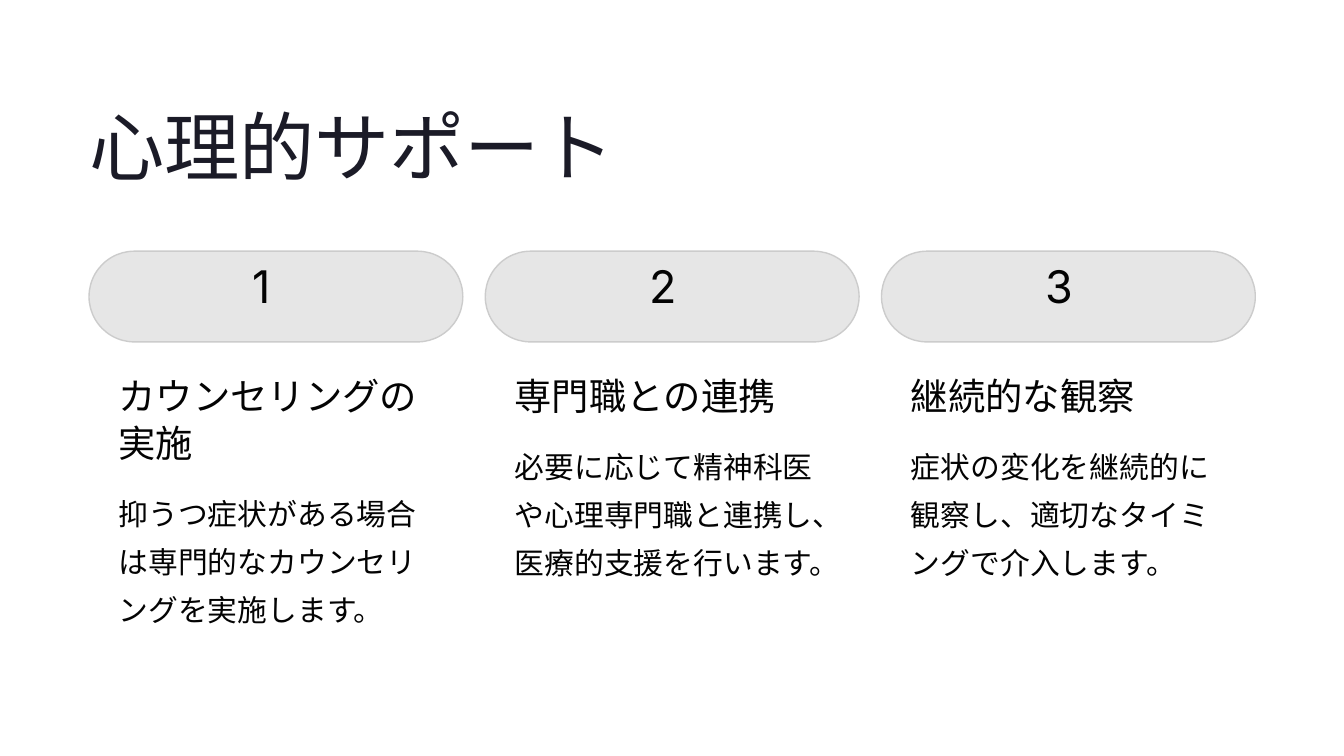
from dataclasses import dataclass

import pptx
import pptx.dml.color
import pptx.enum.shapes
import pptx.enum.text
import pptx.util
from pptx.util import Inches

RGBColor = pptx.dml.color.RGBColor
TITLE_INK = RGBColor(0x1B, 0x1B, 0x27)
INK = RGBColor(0x03, 0x03, 0x03)
PILL_FILL = RGBColor(0xE6, 0xE6, 0xE6)
PILL_LINE = RGBColor(0xCC, 0xCC, 0xCC)

LEFT, PITCH = 1.06, 4.717
PILL_TOP, PILL_WIDTH, PILL_HEIGHT = 2.99, 4.45, 1.08
TEXT_INDENT, TEXT_WIDTH = 0.35, 3.73
HEADING_TOP, HEADING_LINE, HEADING_GAP = 4.42, 0.56, 0.22
BODY_LINE = 0.57


@dataclass
class Style:
    size: float
    spacing: float
    font: str = "Inter"
    color: RGBColor = INK


@dataclass
class Step:
    heading: str
    body: str
    heading_lines: int = 1
    body_lines: int = 3


TITLE = Style(64.5, 80.5, color=TITLE_INK)
NUMBER = Style(38.5, 38.5)
HEADING = Style(32, 40)
BODY = Style(25.5, 41, "Lato")

STEPS = [
    Step("カウンセリングの実施",
         "抑うつ症状がある場合は専門的なカウンセリングを実施します。", heading_lines=2),
    Step("専門職との連携",
         "必要に応じて精神科医や心理専門職と連携し、医療的支援を行います。", body_lines=4),
    Step("継続的な観察",
         "症状の変化を継続的に観察し、適切なタイミングで介入します。"),
]


def set_all(target: object, values: dict) -> None:
    for name, value in values.items():
        setattr(target, name, value)


def write(sp, text: str, style: Style, wrap: bool = False) -> None:
    """Fill a text shape with one left-aligned paragraph and no margins."""
    tf = sp.text_frame
    set_all(tf, {
        "margin_left": 0, "margin_top": 0, "margin_right": 0, "margin_bottom": 0,
        "word_wrap": wrap,
        "auto_size": pptx.enum.text.MSO_AUTO_SIZE.NONE,
        "vertical_anchor": pptx.enum.text.MSO_ANCHOR.TOP,
    })
    p = tf.paragraphs[0]
    set_all(p, {"alignment": pptx.enum.text.PP_ALIGN.LEFT,
                "line_spacing": pptx.util.Pt(style.spacing)})
    r = p.add_run()
    r.text = text
    set_all(r.font, {"size": pptx.util.Pt(style.size), "name": style.font})
    r.font.color.rgb = style.color


def add_text(s, left: float, top: float, width: float, height: float,
             text: str, style: Style, wrap: bool = False) -> None:
    sp = s.shapes.add_textbox(Inches(left), Inches(top), Inches(width), Inches(height))
    write(sp, text, style, wrap)


def add_pill(s, left: float) -> None:
    sp = s.shapes.add_shape(
        pptx.enum.shapes.MSO_SHAPE.ROUNDED_RECTANGLE,
        Inches(left), Inches(PILL_TOP), Inches(PILL_WIDTH), Inches(PILL_HEIGHT))
    sp.adjustments[0] = 0.5
    sp.shadow.inherit = False
    sp.fill.solid()
    sp.fill.fore_color.rgb = PILL_FILL
    sp.line.color.rgb = PILL_LINE
    sp.line.width = pptx.util.Pt(1.2)


def add_step(s, index: int, step: Step) -> None:
    left = LEFT + index * PITCH
    text_left = left + TEXT_INDENT
    heading_height = step.heading_lines * HEADING_LINE
    body_top = HEADING_TOP + heading_height + HEADING_GAP
    add_pill(s, left)
    add_text(s, left + 1.95, PILL_TOP + 0.2, 0.54, 0.67, str(index + 1), NUMBER)
    add_text(s, text_left, HEADING_TOP, TEXT_WIDTH, heading_height,
             step.heading, HEADING, wrap=step.heading_lines > 1)
    add_text(s, text_left, body_top, TEXT_WIDTH, step.body_lines * BODY_LINE,
             step.body, BODY, wrap=True)


def main() -> None:
    prs = pptx.Presentation()
    set_all(prs, {"slide_width": Inches(16), "slide_height": Inches(9)})
    s = prs.slides.add_slide(prs.slide_layouts.get_by_name("Title Only"))
    title = s.shapes.title
    set_all(title, {"left": Inches(LEFT), "top": Inches(1.15),
                    "width": Inches(8.96), "height": Inches(1.12)})
    write(title, "心理的サポート", TITLE)
    for index, step in enumerate(STEPS):
        add_step(s, index, step)
    prs.save("out.pptx")


if __name__ == "__main__":
    main()
